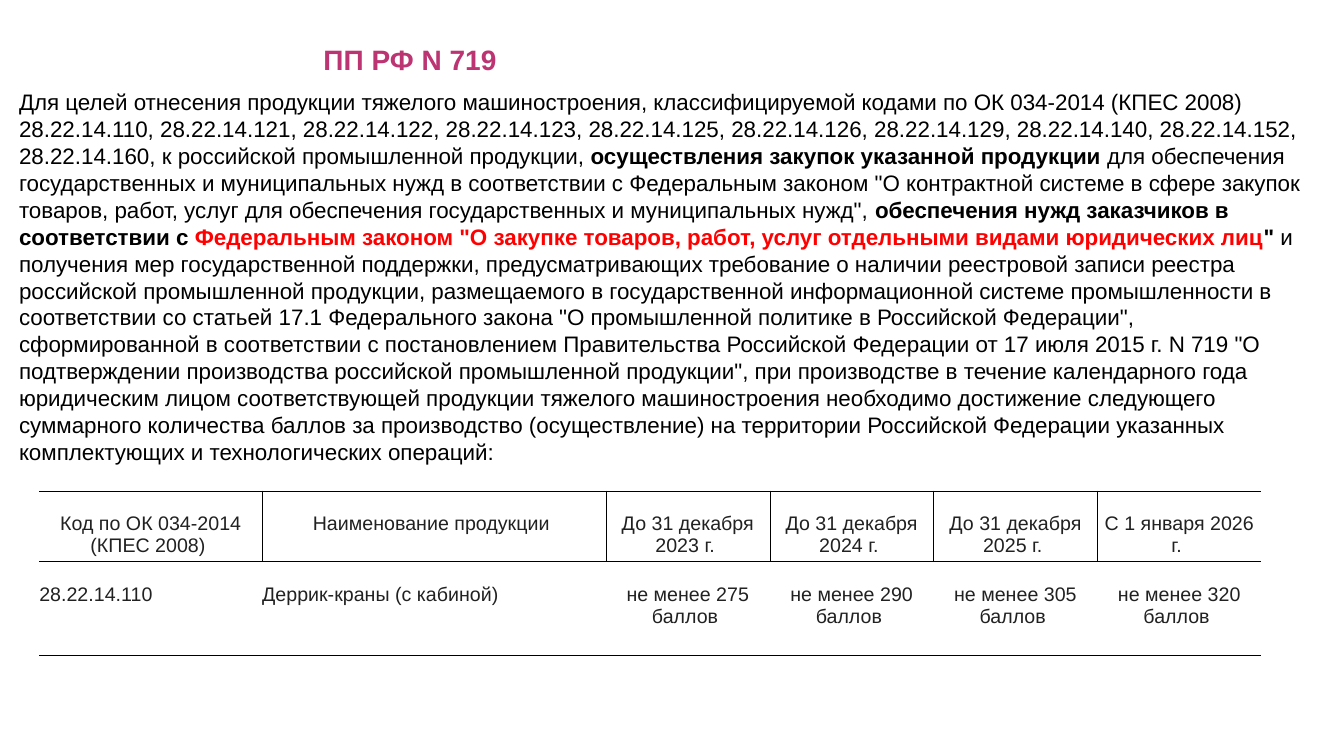
import pptx
import pptx.util
import pptx.dml.color
import pptx.enum.text
import pptx.oxml.ns
import lxml.etree

Inches = pptx.util.Inches
Pt = pptx.util.Pt
qn = pptx.oxml.ns.qn
ALIGN = pptx.enum.text.PP_ALIGN

HUES = {"title": "BC3472", "text": "000000", "law": "FF0000",
        "cell": "212121", "line": "000000"}

BODY = [
    ("Для целей отнесения продукции тяжелого машиностроения, классифицируемой кодами по "
     "ОК 034-2014 (КПЕС 2008) 28.22.14.110, 28.22.14.121, 28.22.14.122, 28.22.14.123, "
     "28.22.14.125, 28.22.14.126, 28.22.14.129, 28.22.14.140, 28.22.14.152, 28.22.14.160, "
     "к российской промышленной продукции, ", "text", False),
    ("осуществления закупок указанной продукции ", "text", True),
    ("для обеспечения государственных и муниципальных нужд в соответствии с Федеральным "
     "законом \"О контрактной системе в сфере закупок товаров, работ, услуг для обеспечения "
     "государственных и муниципальных нужд\", ", "text", False),
    ("обеспечения нужд заказчиков в соответствии с ", "text", True),
    ("Федеральным законом \"О закупке товаров, работ, услуг отдельными видами "
     "юридических лиц", "law", True),
    ("\"", "text", True),
    (" и получения мер государственной поддержки, предусматривающих требование о наличии "
     "реестровой записи реестра российской промышленной продукции, размещаемого в "
     "государственной информационной системе промышленности в соответствии со статьей 17.1 "
     "Федерального закона \"О промышленной политике в Российской Федерации\", сформированной "
     "в соответствии с постановлением Правительства Российской Федерации от 17 июля 2015 г. "
     "N 719 \"О подтверждении производства российской промышленной продукции\", при "
     "производстве в течение календарного года юридическим лицом соответствующей продукции "
     "тяжелого машиностроения необходимо достижение следующего суммарного количества баллов "
     "за производство (осуществление) на территории Российской Федерации указанных "
     "комплектующих и технологических операций:", "text", False),
]

DATES = ["До 31 декабря 2023", "До 31 декабря 2024", "До 31 декабря 2025", "С 1 января 2026"]
MARKS = [275, 290, 305, 320]
ROWS = [
    ["Код по ОК 034-2014 (КПЕС 2008) ", "Наименование продукции "]
    + [f"{date} г. " for date in DATES],
    ["28.22.14.110", "Деррик-краны (с кабиной)"]
    + [f"не менее {mark} баллов " for mark in MARKS],
    [""] * 6,
]


class Page:
    def __init__(self, deck, font, hues):
        self.slide = deck.slides.add_slide(deck.slide_layouts[6])
        self.font = font
        self.hues = hues

    def run(self, para, text, size, hue, bold=False):
        run = para.add_run()
        run.text = text
        run.font.name = self.font
        run.font.size = Pt(size)
        run.font.bold = bold
        run.font.color.rgb = pptx.dml.color.RGBColor.from_string(self.hues[hue])

    def text(self, box, runs, size):
        frame = self.slide.shapes.add_textbox(*map(Inches, box)).text_frame
        frame.word_wrap = True
        frame.auto_size = pptx.enum.text.MSO_AUTO_SIZE.SHAPE_TO_FIT_TEXT
        for text, hue, bold in runs:
            self.run(frame.paragraphs[0], text, size, hue, bold)

    def edge(self, cell, sides):
        props = cell._tc.get_or_add_tcPr()
        for side in "LRTB":
            line = lxml.etree.SubElement(props, qn(f"a:ln{side}"), w=str(Pt(0.38)))
            if side in sides:
                fill = lxml.etree.SubElement(line, qn("a:solidFill"))
                lxml.etree.SubElement(fill, qn("a:srgbClr"), val=self.hues["line"])
            else:
                lxml.etree.SubElement(line, qn("a:noFill"))

    def cell(self, cell, text, sides, mid, gap):
        cell.margin_left = cell.margin_right = cell.margin_bottom = 0
        cell.margin_top = Inches(gap)
        self.edge(cell, sides)
        cell.fill.background()
        para = cell.text_frame.paragraphs[0]
        if text:
            para.alignment = ALIGN.CENTER if mid else ALIGN.LEFT
            self.run(para, text, 14, "cell")
        else:
            lxml.etree.SubElement(para._p, qn("a:endParaRPr"), sz="1000")

    def table(self, box, wides, highs, rows):
        table = self.slide.shapes.add_table(
            len(rows), len(wides), *map(Inches, box)).table
        table.first_row = table.horz_banding = False
        for col, wide in zip(table.columns, wides):
            col.width = Inches(wide)
        for row, high in zip(table.rows, highs):
            row.height = Inches(high)
        last = len(wides) - 1
        for r, texts in enumerate(rows):
            for c, text in enumerate(texts):
                if r == 0:
                    sides = "TB" + ("L" if c > 0 else "") + ("R" if c < last else "")
                elif r == 1:
                    sides = "TB" if c == 0 else "T"
                else:
                    sides = "B"
                self.cell(table.cell(r, c), text, sides,
                          r == 0 or c > 1, 0.22 if text else 0)
        table.cell(1, 0).merge(table.cell(2, 0))


def main():
    deck = pptx.Presentation()
    deck.slide_width = Inches(13.33)
    deck.slide_height = Inches(7.5)
    page = Page(deck, "Arial", HUES)
    page.text((3.11, 0.37, 2.24, 0.42), [("ПП РФ N 719", "title", True)], 20)
    page.text((0.09, 0.83, 13.05, 3.87), BODY, 16)
    wide, code, name = 12.12, 2.21, 3.41
    score = (wide - code - name) / len(MARKS)
    page.table((0.39, 4.87, wide, 1.63), [code, name] + [score] * len(MARKS),
               [0.7, 0.7, 0.23], ROWS)
    deck.save("out.pptx")


if __name__ == "__main__":
    main()
